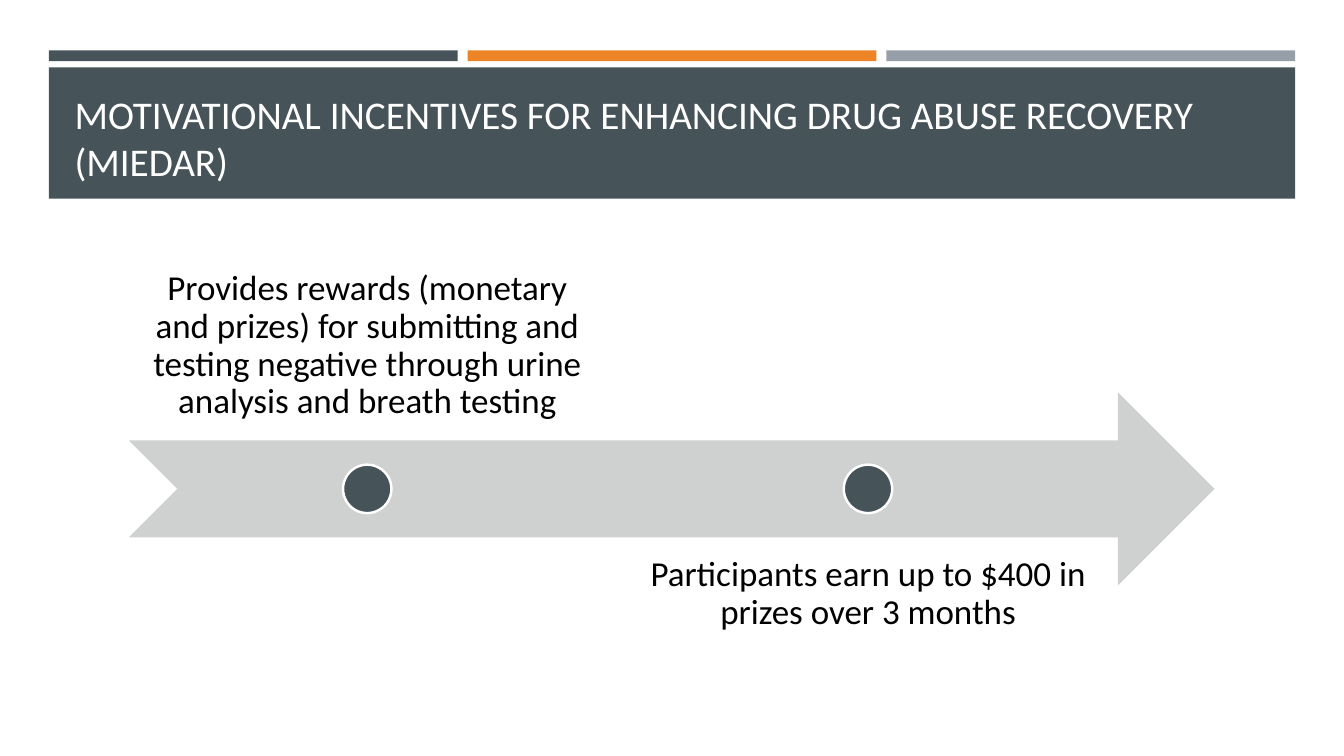
from pptx import Presentation
from pptx.dml.color import RGBColor as Rgb
from pptx.enum.shapes import MSO_SHAPE as Kind
from pptx.enum.text import MSO_ANCHOR as Anchor, PP_ALIGN as Align
from pptx.util import Cm, Pt

DARK, ORANGE, GREY = "465359", "ED8428", "969FA7"
PALE, WHITE, BLACK = "CFD1D1", "FFFFFF", "000000"
TITLE = "MOTIVATIONAL INCENTIVES FOR ENHANCING DRUG ABUSE RECOVERY (MIEDAR)"
STEPS = [
    "Provides rewards (monetary and prizes) for submitting and "
    "testing negative through urine analysis and breath testing",
    "Participants earn up to $400 in prizes over 3 months",
]


def color(code):
    return Rgb.from_string(code)


def add_form(slide, kind, box, fill, line=None):
    form = slide.shapes.add_shape(kind, *map(Cm, box))
    form.shadow.inherit = False
    form.fill.solid()
    form.fill.fore_color.rgb = color(fill)
    if line:
        form.line.color.rgb = color(line)
        form.line.width = Pt(1.75)
    else:
        form.line.fill.background()


def add_text(slide, box, text, size, ink, anchor):
    frame = slide.shapes.add_textbox(*map(Cm, box)).text_frame
    frame.word_wrap = True
    frame.vertical_anchor = anchor
    para = frame.paragraphs[0]
    para.text = text
    para.font.name = "Calibri"
    para.font.size = Pt(size)
    para.font.color.rgb = color(ink)
    return frame


def add_header(slide, left, top, width, height):
    # Three accent bars above the title panel
    gap, bar = 0.25, 0.27
    span = (width - 2 * gap) / 3
    for i, fill in enumerate([DARK, ORANGE, GREY]):
        x = left + i * (span + gap)
        add_form(slide, Kind.RECTANGLE, (x, top, span, bar), fill)

    # Title panel
    drop = 0.43
    y, depth = top + drop, height - drop
    add_form(slide, Kind.RECTANGLE, (left, y, width, depth), DARK)
    box = (left + 0.4, y + 0.25, width - 0.8, depth - 0.48)
    add_text(slide, box, TITLE, 28, WHITE, Anchor.BOTTOM)


def add_timeline(slide, left, top, width, height):
    # Arrow
    add_form(slide, Kind.NOTCHED_RIGHT_ARROW, (left, top, width, height), PALE)

    # Steps alternate above and below the arrow, each with a dot
    span, pitch, dot = 12.01, 12.62, height / 4
    for i, text in enumerate(STEPS):
        above = i % 2 == 0
        x = left + i * pitch
        y = top + height * (-0.75 if above else 0.75)
        anchor = Anchor.BOTTOM if above else Anchor.TOP
        frame = add_text(slide, (x, y, span, height), text, 25, BLACK, anchor)
        frame.margin_left = frame.margin_right = Cm(0.48)
        frame.margin_top = frame.margin_bottom = Cm(0.48)
        para = frame.paragraphs[0]
        para.alignment = Align.CENTER
        para.line_spacing = 0.9
        spot = (x + (span - dot) / 2, top + (height - dot) / 2, dot, dot)
        add_form(slide, Kind.OVAL, spot, DARK, WHITE)


def main():
    deck = Presentation()
    deck.slide_width, deck.slide_height = Cm(33.87), Cm(19.05)
    slide = deck.slides.add_slide(deck.slide_layouts[6])
    add_header(slide, 1.23, 1.27, 31.41, 3.74)
    add_timeline(slide, 3.25, 9.88, 27.36, 4.88)
    deck.save("out.pptx")


if __name__ == "__main__":
    main()
